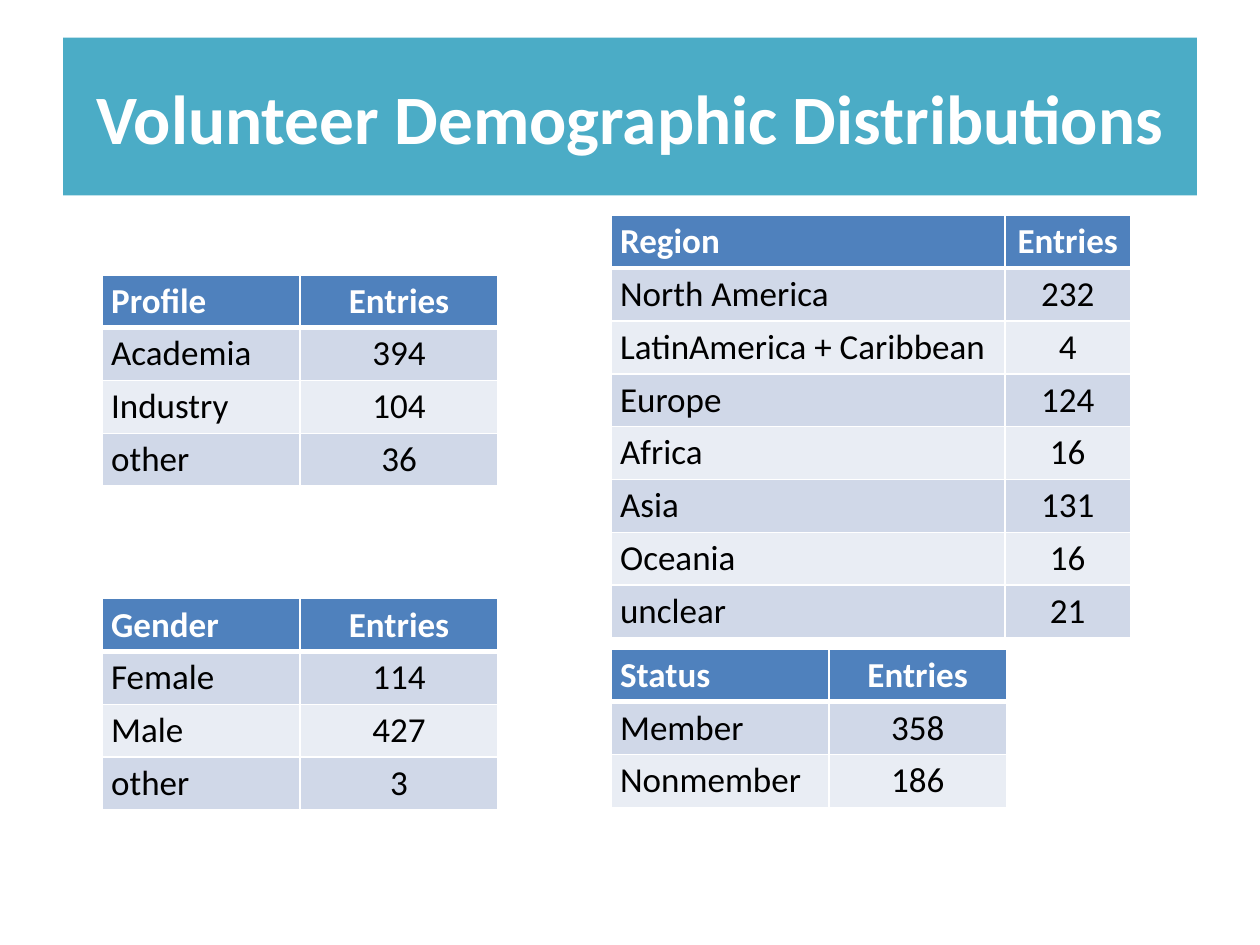
from dataclasses import dataclass

from lxml.etree import SubElement
from pptx import Presentation
from pptx.dml.color import RGBColor
from pptx.enum.text import MSO_ANCHOR as Anchor, MSO_AUTO_SIZE as AutoSize, PP_ALIGN as Align
from pptx.oxml.ns import qn
from pptx.util import Cm, Pt


@dataclass(frozen=True)
class Theme:
    font: str = "Calibri"
    title_size: float = 39.6
    table_size: float = 20
    banner: str = "4BACC6"
    header: str = "4F81BD"
    bands: tuple = ("D0D8E8", "E9EDF4")
    light: str = "FFFFFF"
    dark: str = "000000"
    thin_line: float = 1
    thick_line: float = 3


class SlideBuilder:
    row_height = 1.04
    margin_x = 0.18
    margin_y = 0.1

    def __init__(self, slide, theme):
        self.slide = slide
        self.theme = theme

    def format_text(self, text_frame, size, color, bold, align):
        for paragraph in text_frame.paragraphs:
            paragraph.alignment = align
            for run in paragraph.runs:
                run.font.name = self.theme.font
                run.font.size = Pt(size)
                run.font.bold = bold
                run.font.color.rgb = RGBColor.from_string(color)

    def add_title(self, text, left, top, width, height):
        title = self.slide.shapes.title
        title.left, title.top, title.width, title.height = map(Cm, (left, top, width, height))
        title.fill.solid()
        title.fill.fore_color.rgb = RGBColor.from_string(self.theme.banner)
        text_frame = title.text_frame
        text_frame.text = text
        text_frame.word_wrap = True
        text_frame.auto_size = AutoSize.NONE
        text_frame.vertical_anchor = Anchor.MIDDLE
        self.format_text(text_frame, self.theme.title_size, self.theme.light, True, Align.CENTER)

    def add_border(self, cell, side, width):
        line = SubElement(cell._tc.get_or_add_tcPr(), qn(f"a:ln{side}"), w=str(Pt(width)))
        fill = SubElement(line, qn("a:solidFill"))
        SubElement(fill, qn("a:srgbClr"), val=self.theme.light)

    def format_cell(self, cell, row, column):
        theme = self.theme
        is_header = row == 0
        thick_side = {0: "B", 1: "T"}.get(row)
        for side in "LRTB":
            self.add_border(cell, side, theme.thick_line if side == thick_side else theme.thin_line)
        cell.fill.solid()
        fill = theme.header if is_header else theme.bands[(row - 1) % 2]
        cell.fill.fore_color.rgb = RGBColor.from_string(fill)
        cell.margin_left = cell.margin_right = Cm(self.margin_x)
        cell.margin_top = cell.margin_bottom = Cm(self.margin_y)
        self.format_text(
            cell.text_frame,
            theme.table_size,
            theme.light if is_header else theme.dark,
            is_header,
            Align.CENTER if column else Align.LEFT,
        )

    def add_count_table(self, left, top, column_widths, category, counts):
        rows = [(category, "Entries"), *counts]
        table = self.slide.shapes.add_table(
            len(rows), len(column_widths), Cm(left), Cm(top),
            Cm(sum(column_widths)), Cm(self.row_height * len(rows)),
        ).table
        for column, width in zip(table.columns, column_widths):
            column.width = Cm(width)
        for row_index, values in enumerate(rows):
            for column_index, value in enumerate(values):
                cell = table.cell(row_index, column_index)
                cell.text_frame.text = str(value)
                self.format_cell(cell, row_index, column_index)


def main():
    presentation = Presentation()
    presentation.slide_width = Cm(25.4)
    presentation.slide_height = Cm(19.05)
    title_only = presentation.slide_layouts[5]
    builder = SlideBuilder(presentation.slides.add_slide(title_only), Theme())

    left_edge, right_edge = 2.06, 12.32
    equal_columns = (3.99, 3.99)

    builder.add_title("Volunteer Demographic Distributions", 1.27, 0.76, 22.86, 3.18)
    builder.add_count_table(
        left_edge, 5.54, equal_columns, "Profile",
        [("Academia", 394), ("Industry", 104), ("other", 36)],
    )
    builder.add_count_table(
        left_edge, 12.07, equal_columns, "Gender",
        [("Female", 114), ("Male", 427), ("other", 3)],
    )
    builder.add_count_table(
        right_edge, 4.34, (7.94, 2.53), "Region",
        [
            ("North America", 232),
            ("LatinAmerica + Caribbean", 4),
            ("Europe", 124),
            ("Africa", 16),
            ("Asia", 131),
            ("Oceania", 16),
            ("unclear", 21),
        ],
    )
    builder.add_count_table(
        right_edge, 13.08, (4.39, 3.58), "Status",
        [("Member", 358), ("Nonmember", 186)],
    )
    presentation.save("out.pptx")


if __name__ == "__main__":
    main()
